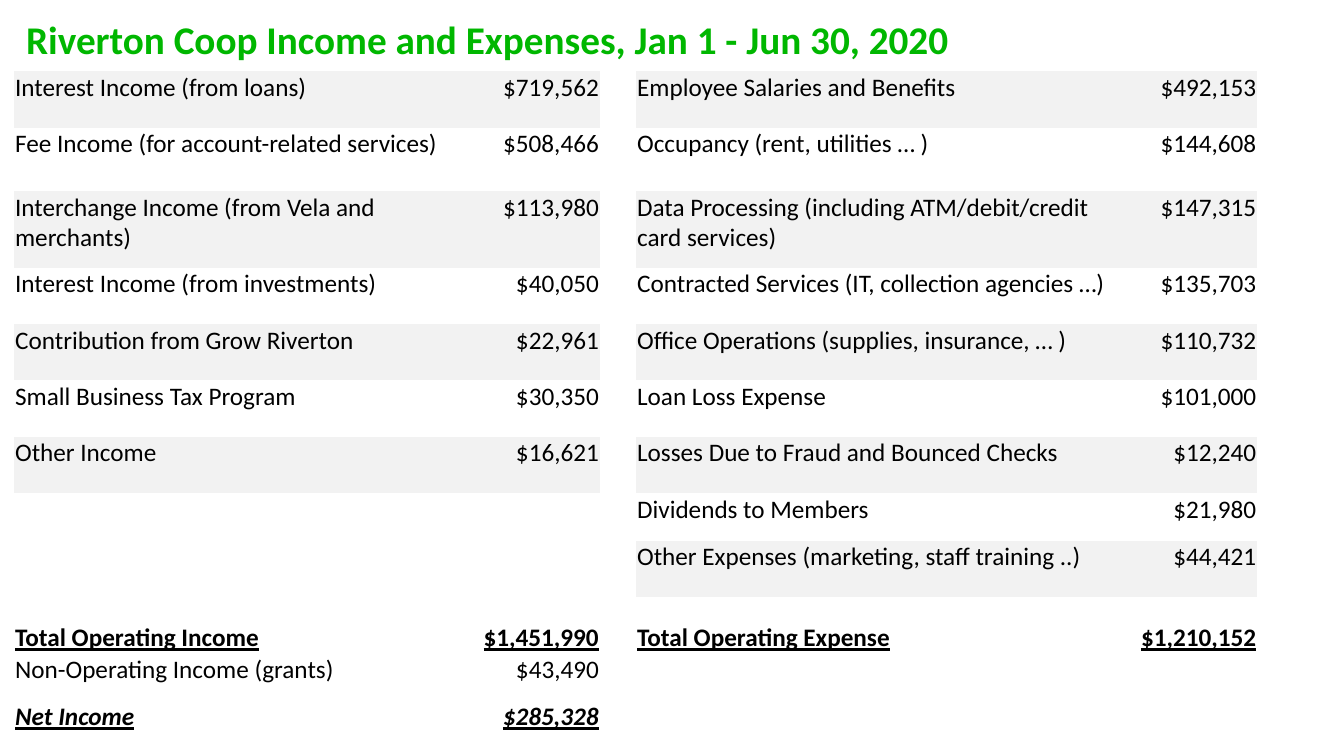
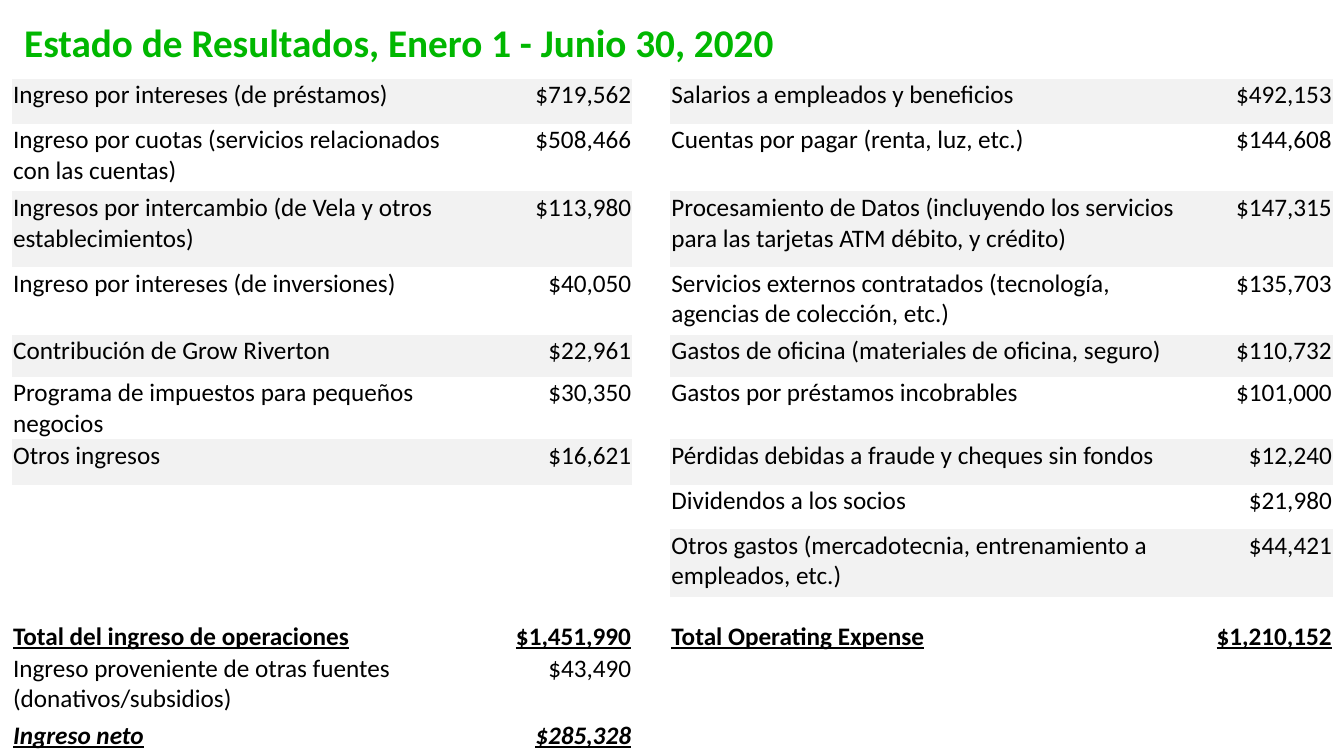
"""Build the income and expense statement in English and Spanish."""
from dataclasses import dataclass

from pptx import Presentation
from pptx.dml.color import RGBColor
from pptx.enum.text import MSO_ANCHOR, PP_ALIGN
from pptx.util import Inches, Pt


@dataclass(frozen=True)
class Theme:
    font: str = "Calibri"
    title_size: int = 28
    body_size: int = 18
    title: RGBColor = RGBColor(0x00, 0xB7, 0x00)
    body: RGBColor = RGBColor(0x00, 0x00, 0x00)
    band: RGBColor = RGBColor(0xF2, 0xF2, 0xF2)
    no_grid_style: str = "{2D5ABB26-0587-4C30-8999-92F81FD0307C}"


THEME = Theme()
TOTAL_ROW, NET_ROW = 10, 12
INCOME_COLUMN, EXPENSE_COLUMN = 0, 3

INCOME_AMOUNTS = ["$719,562", "$508,466", "$113,980", "$40,050", "$22,961", "$30,350",
                  "$16,621", "", "", "$1,451,990", "$43,490", "$285,328"]
EXPENSE_AMOUNTS = ["$492,153", "$144,608", "$147,315", "$135,703", "$110,732", "$101,000",
                   "$12,240", "$21,980", "$44,421", "$1,210,152", "", ""]

STATEMENTS = [
    {
        "title": "Riverton Coop Income and Expenses, Jan 1 - Jun 30, 2020",
        "place": (0.14, 0.11),
        "columns": [4.39, 1.42, 0.36, 4.95, 1.21],
        "rows": [0.54, 0.56, 0.63, 0.76, 0.56, 0.56, 0.56, 0.56, 0.47, 0.56, 0.56, 0.47, 0.32],
        "income": [
            "Interest Income (from loans)",
            "Fee Income (for account-related services)",
            "Interchange Income (from Vela and merchants)",
            "Interest Income (from investments)",
            "Contribution from Grow Riverton",
            "Small Business Tax Program",
            "Other Income",
            "",
            "",
            "Total Operating Income",
            "Non-Operating Income (grants)",
            "Net Income",
        ],
        "expense": [
            "Employee Salaries and Benefits",
            "Occupancy (rent, utilities … )",
            "Data Processing (including ATM/debit/credit card services)",
            "Contracted Services (IT, collection agencies …)",
            "Office Operations (supplies, insurance, … )",
            "Loan Loss Expense",
            "Losses Due to Fraud and Bounced Checks",
            "Dividends to Members",
            "Other Expenses (marketing, staff training ..)",
            "Total Operating Expense",
            "",
            "",
        ],
    },
    {
        "title": "Estado de Resultados, Enero 1 - Junio 30, 2020",
        "place": (0.12, 0.14),
        "columns": [4.64, 1.51, 0.38, 5.28, 1.29],
        "rows": [0.64, 0.45, 0.67, 0.75, 0.67, 0.42, 0.45, 0.45, 0.44, 0.67, 0.55, 0.67, 0.34],
        "income": [
            "Ingreso por intereses (de préstamos)",
            "Ingreso por cuotas (servicios relacionados con las cuentas)",
            "Ingresos por intercambio (de Vela y otros establecimientos)",
            "Ingreso por intereses (de inversiones)",
            "Contribución de Grow Riverton",
            "Programa de impuestos para pequeños negocios",
            "Otros ingresos",
            "",
            "",
            "Total del ingreso de operaciones",
            "Ingreso proveniente de otras fuentes (donativos/subsidios)",
            "Ingreso neto",
        ],
        "expense": [
            "Salarios a empleados y beneficios",
            "Cuentas por pagar (renta, luz, etc.)",
            "Procesamiento de Datos (incluyendo los servicios para las tarjetas ATM débito, y crédito)",
            "Servicios externos contratados (tecnología, agencias de colección, etc.)",
            "Gastos de oficina (materiales de oficina, seguro)",
            "Gastos por préstamos incobrables",
            "Pérdidas debidas a fraude y cheques sin fondos",
            "Dividendos a los socios",
            "Otros gastos (mercadotecnia, entrenamiento a empleados, etc.)",
            "Total Operating Expense",
            "",
            "",
        ],
    },
]


def write(cell, text, size, color, bold=False):
    """Add one run to a cell and return its paragraph and run."""
    para = cell.text_frame.paragraphs[0]
    span = para.add_run()
    span.text = text
    span.font.name = THEME.font
    span.font.size = Pt(size)
    span.font.color.rgb = color
    span.font.bold = bold
    return para, span


deck = Presentation()
deck.slide_width, deck.slide_height = Inches(13.33), Inches(7.5)

for statement in STATEMENTS:
    page = deck.slides.add_slide(deck.slide_layouts[6])
    columns, rows = statement["columns"], statement["rows"]
    left, top = statement["place"]
    frame = page.shapes.add_table(len(rows), len(columns), Inches(left), Inches(top),
                                  Inches(sum(columns)), Inches(sum(rows)))
    table = frame.table
    table.first_row = table.horz_banding = False
    table._tbl.tblPr[0].text = THEME.no_grid_style
    for column, width in zip(table.columns, columns):
        column.width = Inches(width)
    for row, height in zip(table.rows, rows):
        row.height = Inches(height)
    for cell in table.iter_cells():
        cell.fill.background()
        cell.margin_left = cell.margin_right = cell.margin_top = Inches(0.01)
        cell.margin_bottom = 0

    heading = table.cell(0, 0)
    heading.merge(table.cell(0, 3))
    heading.margin_left = heading.margin_right = Inches(0.12)
    heading.margin_top = heading.margin_bottom = Inches(0.06)
    write(heading, statement["title"], THEME.title_size, THEME.title, bold=True)

    for first_column, labels, amounts in (
        (INCOME_COLUMN, statement["income"], INCOME_AMOUNTS),
        (EXPENSE_COLUMN, statement["expense"], EXPENSE_AMOUNTS),
    ):
        for row, entry in enumerate(zip(labels, amounts), start=1):
            if not any(entry):
                continue
            is_sum = row in (TOTAL_ROW, NET_ROW)
            for offset, text in enumerate(entry):
                cell = table.cell(row, first_column + offset)
                para, span = write(cell, text, THEME.body_size, THEME.body, bold=is_sum)
                span.font.underline = is_sum
                span.font.italic = row == NET_ROW
                if offset:
                    para.alignment = PP_ALIGN.RIGHT
                if row == TOTAL_ROW:
                    cell.vertical_anchor = MSO_ANCHOR.BOTTOM
                if row < TOTAL_ROW and row % 2:
                    cell.fill.solid()
                    cell.fill.fore_color.rgb = THEME.band

deck.save("out.pptx")
